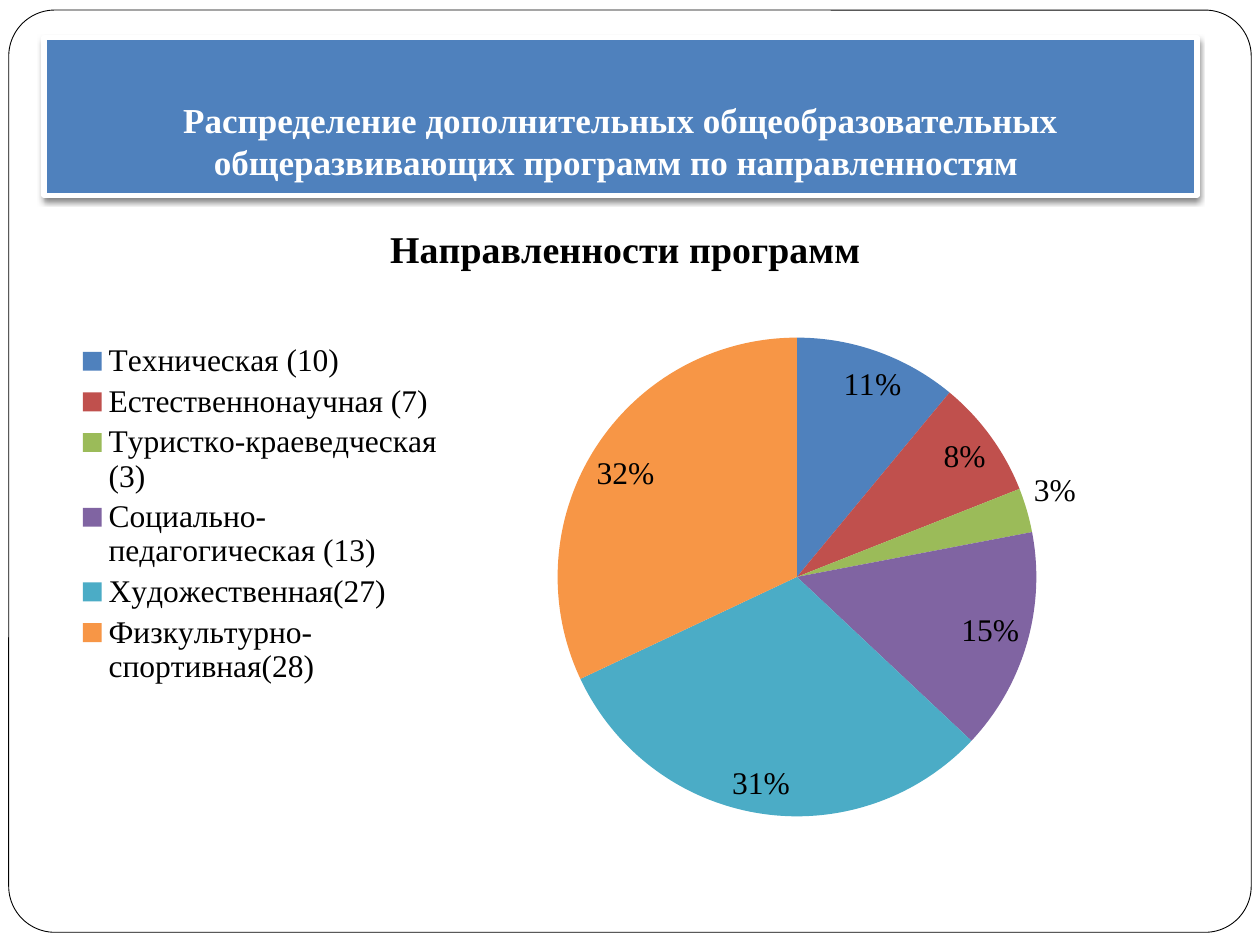
"""Build a slide with a title banner and a pie chart of programme types."""
import pptx
import pptx.chart.data
import pptx.dml.color
import pptx.enum.chart
import pptx.enum.shapes
import pptx.enum.text
import pptx.oxml
import pptx.oxml.ns
import pptx.util

Pt = pptx.util.Pt
RGB = pptx.dml.color.RGBColor
WHITE = RGB(0xFF, 0xFF, 0xFF)
BLACK = RGB(0x00, 0x00, 0x00)
BLUE = RGB(0x4F, 0x81, 0xBD)
RED = RGB(0xC0, 0x50, 0x4D)
GREEN = RGB(0x9B, 0xBB, 0x59)
PURPLE = RGB(0x80, 0x64, 0xA2)
TEAL = RGB(0x4B, 0xAC, 0xC6)
ORANGE = RGB(0xF7, 0x96, 0x46)

TITLE = ("Распределение дополнительных общеобразовательных "
         "общеразвивающих программ по направленностям ")
NAME = "Направленности программ"
SHARES = [
    ("Техническая (10)", 11, BLUE),
    ("Естественнонаучная (7)", 8, RED),
    ("Туристко-краеведческая (3)", 3, GREEN),
    ("Социально-педагогическая (13)", 15, PURPLE),
    ("Художественная(27)", 31, TEAL),
    ("Физкультурно-спортивная(28)", 32, ORANGE),
]


class Deck:
    def __init__(self, slide, face="Times New Roman"):
        self.slide = slide
        self.face = face

    def style(self, font, size, color, bold=False):
        font.name = self.face
        font.size = Pt(size)
        font.bold = bold
        font.color.rgb = color

    def box(self, kind, area, fill, line, width):
        shape = self.slide.shapes.add_shape(kind, *map(Pt, area))
        shape.shadow.inherit = False
        shape.fill.solid()
        shape.fill.fore_color.rgb = fill
        shape.line.color.rgb = line
        shape.line.width = Pt(width)
        return shape

    def shade(self, shape, blur, dist):
        glow = pptx.oxml.parse_xml(
            f'<a:outerShdw {pptx.oxml.ns.nsdecls("a")} blurRad="{Pt(blur)}" '
            f'dist="{Pt(dist)}" dir="5400000" rotWithShape="0">'
            '<a:srgbClr val="000000"><a:alpha val="50000"/></a:srgbClr>'
            '</a:outerShdw>')
        shape.element.spPr.find(pptx.oxml.ns.qn("a:effectLst")).append(glow)

    def label(self, shape, text, size, color):
        frame = shape.text_frame
        frame.word_wrap = True
        frame.vertical_anchor = pptx.enum.text.MSO_ANCHOR.BOTTOM
        frame.margin_bottom = Pt(7.2)
        frame.text = text
        for para in frame.paragraphs:
            para.alignment = pptx.enum.text.PP_ALIGN.CENTER
            for run in para.runs:
                self.style(run.font, size, color, True)

    def place(self, owner, area, inner=False):
        target = '<c:layoutTarget val="inner"/>' if inner else ""
        modes = '<c:xMode val="edge"/><c:yMode val="edge"/>'
        sizes = "".join(f'<c:{key} val="{val}"/>' for key, val in zip("xywh", area))
        layout = pptx.oxml.parse_xml(
            f'<c:layout {pptx.oxml.ns.nsdecls("c")}><c:manualLayout>'
            f'{target}{modes}{sizes}</c:manualLayout></c:layout>')
        for old in owner.findall(pptx.oxml.ns.qn("c:layout")):
            owner.remove(old)
        spot = owner.find(pptx.oxml.ns.qn("c:legendPos"))
        owner.insert(0 if spot is None else owner.index(spot) + 1, layout)

    def pie(self, area, name, rows, size):
        kinds = pptx.enum.chart
        data = pptx.chart.data.CategoryChartData()
        data.categories = [row[0] for row in rows]
        data.add_series(name, [row[1] for row in rows])
        chart = self.slide.shapes.add_chart(
            kinds.XL_CHART_TYPE.PIE, *map(Pt, area), data).chart
        self.style(chart.font, size, BLACK)
        chart.has_title = True
        head = chart.chart_title.text_frame
        head.text = name
        self.style(head.paragraphs[0].runs[0].font, size * 1.2, BLACK, True)
        chart.has_legend = True
        chart.legend.position = kinds.XL_LEGEND_POSITION.LEFT
        chart.legend.include_in_layout = False
        plot = chart.plots[0]
        plot.vary_by_categories = True
        for spot, row in enumerate(rows):
            fill = plot.series[0].points[spot].format.fill
            fill.solid()
            fill.fore_color.rgb = row[2]
        labels = plot.series[0].data_labels
        labels.show_percentage = True
        labels.show_value = False
        labels.number_format = "0%"
        labels.number_format_is_linked = False
        labels.position = kinds.XL_LABEL_POSITION.BEST_FIT
        self.style(labels.font, size, BLACK)
        root = chart.element.chart
        self.place(root.plotArea, (0.44, 0.22, 0.42, 0.76), True)
        self.place(root.find(pptx.oxml.ns.qn("c:legend")), (0.01, 0.22, 0.34, 0.56))


def main():
    show = pptx.Presentation()
    show.slide_width, show.slide_height = Pt(720), Pt(540)
    deck = Deck(show.slides.add_slide(show.slide_layouts[6]))
    forms = pptx.enum.shapes.MSO_SHAPE
    frame = deck.box(forms.ROUNDED_RECTANGLE, (5, 5.75, 710, 527), WHITE, BLACK, 0.5)
    frame.adjustments[0] = 0.05
    banner = deck.box(forms.RECTANGLE, (25.2, 21.6, 658.8, 90), BLUE, WHITE, 3)
    deck.shade(banner, 3, 2)
    deck.label(banner, TITLE, 20, WHITE)
    deck.pie((31, 113.75, 653, 360), NAME, SHARES, 18)
    show.save("out.pptx")


if __name__ == "__main__":
    main()
